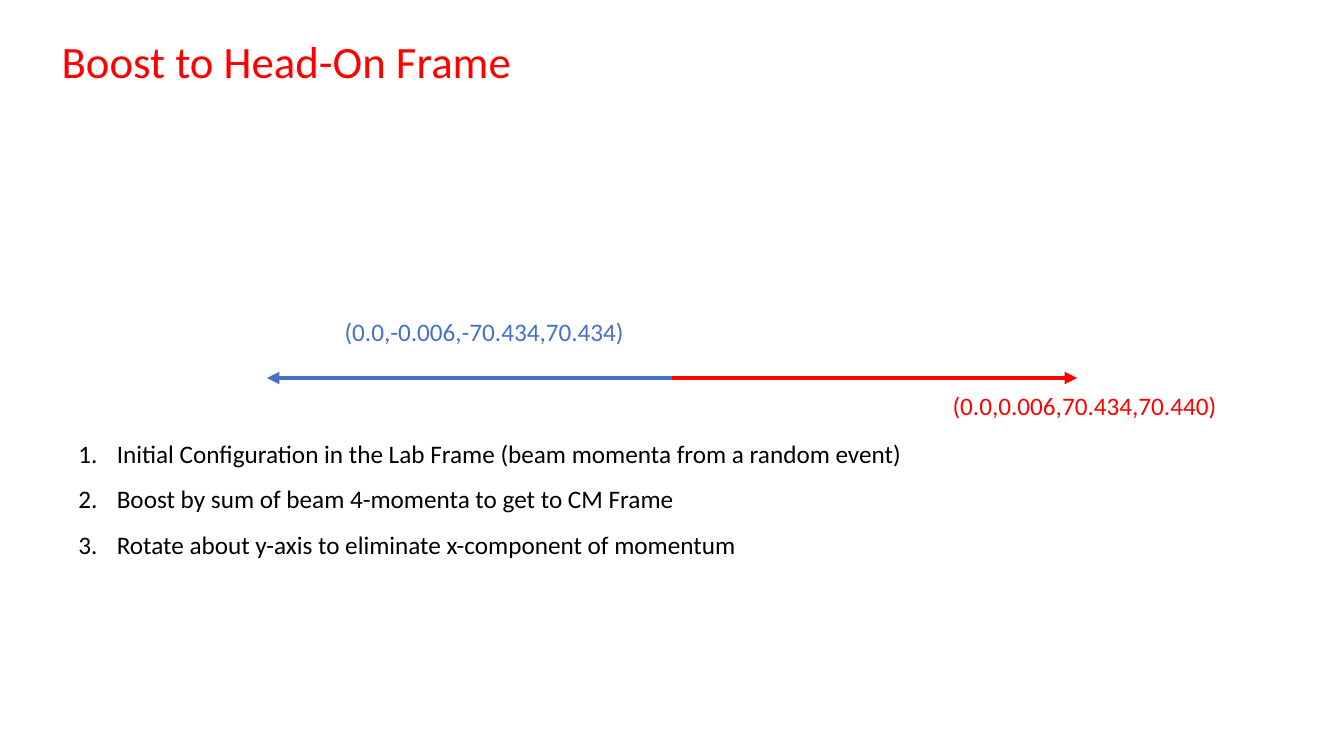
from dataclasses import dataclass

from lxml import etree
from pptx import Presentation, util as u
from pptx.dml.color import RGBColor
from pptx.enum import shapes, text
from pptx.oxml.ns import qn

WIDE, HIGH = u.Inches(13.33), u.Inches(7.5)
FONT = "Calibri"
BLUE, RED, BLACK = "4472C4", "FF0000", "000000"
MID = 50
REACH = 30.15
INDENT = u.Inches(0.38)


@dataclass
class Box:
    """An area in percent of the slide's width and height."""
    left: float
    top: float
    width: float
    height: float


@dataclass
class Beam:
    side: int
    color: str
    label: str
    box: Box


TITLE = Box(3.83, 3.73, 68.94, 8.53)
STEPS = Box(5.1, 55.33, 70.97, 18.93)
BEAMS = [
    Beam(-1, BLUE, "(0.0,-0.006,-70.434,70.434)", Box(24.9, 41.2, 25.06, 5.33)),
    Beam(1, RED, "(0.0,0.006,70.434,70.440)", Box(70.14, 50.93, 25.06, 5.33)),
]
LINES = [
    "Initial Configuration in the Lab Frame (beam momenta from a random event)",
    "Boost by sum of beam 4-momenta to get to CM Frame",
    "Rotate about y-axis to eliminate x-component of momentum",
]


def across(share: float) -> int:
    return round(WIDE * share / 100)


def down(share: float) -> int:
    return round(HIGH * share / 100)


def paint(code: str) -> RGBColor:
    return RGBColor.from_string(code)


def place(shape, box: Box) -> None:
    shape.left, shape.top = across(box.left), down(box.top)
    shape.width, shape.height = across(box.width), down(box.height)


def write(shape, words: str, size: int, color: str) -> None:
    frame = shape.text_frame
    frame.text = words
    frame.word_wrap = True
    frame.auto_size = text.MSO_AUTO_SIZE.SHAPE_TO_FIT_TEXT
    frame.vertical_anchor = text.MSO_ANCHOR.TOP
    for para in frame.paragraphs:
        para.alignment = text.PP_ALIGN.LEFT
        for run in para.runs:
            run.font.name = FONT
            run.font.size = u.Pt(size)
            run.font.color.rgb = paint(color)


def add_text(slide, box: Box, words: str, color: str):
    shape = slide.shapes.add_textbox(0, 0, 0, 0)
    place(shape, box)
    write(shape, words, 18, color)
    return shape


def add_beam(slide, beam: Beam) -> None:
    """Draw an arrow from the slide's centre to one side."""
    line = slide.shapes.add_connector(
        shapes.MSO_CONNECTOR.STRAIGHT, across(MID), down(MID),
        across(MID + beam.side * REACH), down(MID))
    line.line.color.rgb = paint(beam.color)
    line.line.width = u.Pt(3)
    etree.SubElement(line.line._get_or_add_ln(), qn("a:tailEnd"), type="triangle")
    etree.SubElement(line._element.spPr, qn("a:effectLst"))


def number(shape) -> None:
    """Turn the paragraphs into a numbered list."""
    for para in shape.text_frame.paragraphs:
        para.line_spacing = 1.5
        props = para._p.get_or_add_pPr()
        props.set("marL", str(INDENT))
        props.set("indent", str(-INDENT))
        etree.SubElement(props, qn("a:buFont"), typeface="+mj-lt")
        etree.SubElement(props, qn("a:buAutoNum"), type="arabicPeriod")


def main() -> None:
    deck = Presentation()
    deck.slide_width, deck.slide_height = WIDE, HIGH
    slide = deck.slides.add_slide(deck.slide_layouts.get_by_name("Title Only"))
    title = slide.shapes.title
    place(title, TITLE)
    write(title, "Boost to Head-On Frame", 32, RED)
    for beam in BEAMS:
        add_beam(slide, beam)
        add_text(slide, beam.box, beam.label, beam.color)
    number(add_text(slide, STEPS, "\n".join(LINES), BLACK))
    deck.save("out.pptx")


if __name__ == "__main__":
    main()
